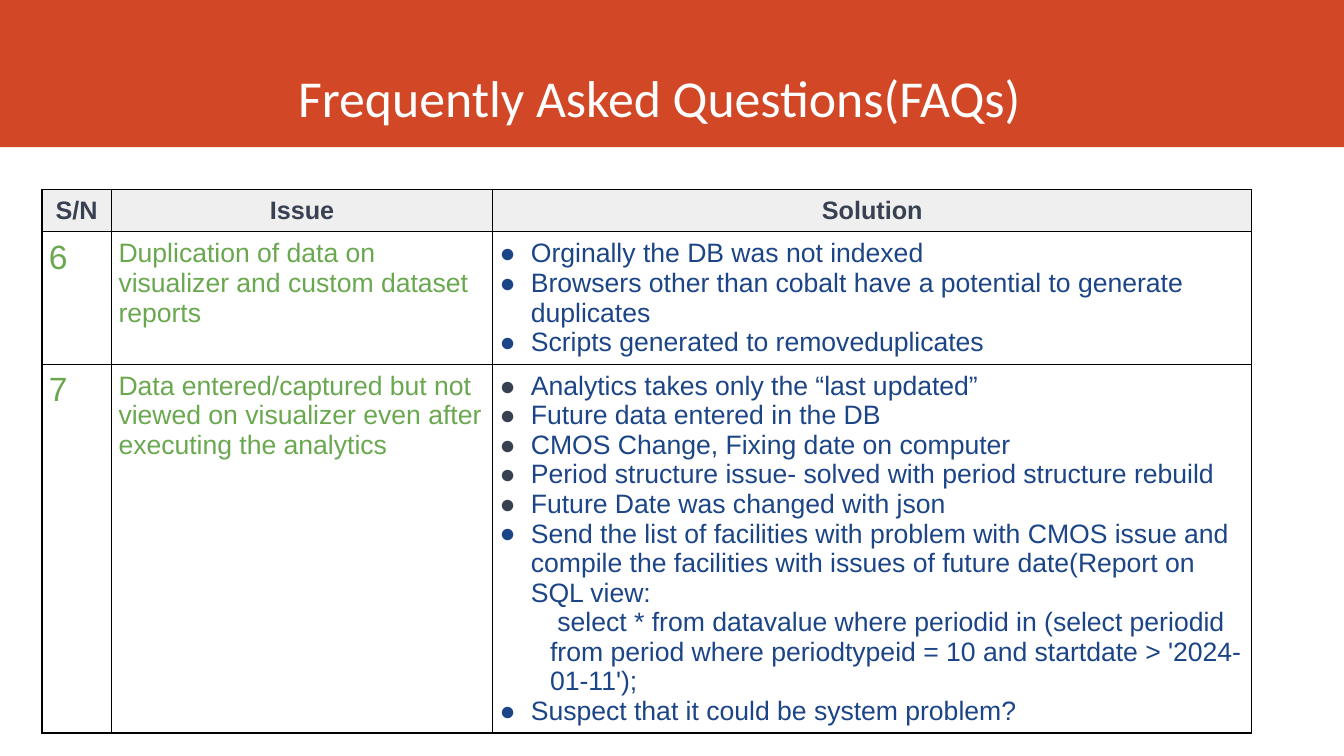
from dataclasses import dataclass

from lxml.etree import SubElement as Sub
from pptx import Presentation
from pptx.dml.color import RGBColor as RGB
from pptx.enum.shapes import MSO_SHAPE as Shape
from pptx.enum.text import MSO_ANCHOR as Anchor, MSO_AUTO_SIZE as Auto, PP_ALIGN as Align
from pptx.oxml.ns import qn
from pptx.util import Emu, Inches, Pt

COLORS = {
    "band": "D24726", "white": "FFFFFF", "head": "EFEFEF", "slate": "374151",
    "green": "6AA84F", "navy": "1C4587", "rule": "000000",
}
WIDE, HIGH = Inches(13.33), Inches(7.5)
PAD = Inches(0.07)

# Table grid, in percent of the slide's width and height
COLS = (5.18, 28.36, 56.49)
ROWS = (3.6, 9.87, 10.4)


@dataclass
class Line:
    text: str
    size: float = 19
    color: str = "navy"
    bold: bool = False
    align: Align = Align.LEFT
    dot: str = ""
    left: float = 0


@dataclass
class Case:
    num: str
    issue: str
    fixes: list[Line]


def item(text: str, dot: str = "navy") -> Line:
    return Line(text, dot=dot, left=0.31)


CASES = [
    Case("6", "Duplication of data on visualizer and custom dataset reports", [
        item("Orginally the DB was not indexed"),
        item("Browsers other than cobalt have a potential to generate duplicates"),
        item("Scripts generated to removeduplicates"),
    ]),
    Case("7", "Data entered/captured but not viewed on visualizer even after "
         "executing the analytics", [
        item("Analytics takes only the “last updated”", "slate"),
        item("Future data entered in the DB", "slate"),
        item("CMOS Change, Fixing date on computer", "slate"),
        item("Period structure issue- solved with period structure rebuild", "slate"),
        item("Future Date was changed with json", "slate"),
        item("Send the list of facilities with problem with CMOS issue and compile "
             "the facilities with issues of future date(Report on SQL view: "),
        Line(" select * from datavalue where periodid in (select periodid from period "
             "where periodtypeid = 10 and startdate > '2024-01-11');", left=0.5),
        item("Suspect that it could be system problem?"),
    ]),
]


def across(part: float) -> Emu:
    return Emu(round(WIDE * part / 100))


def down(part: float) -> Emu:
    return Emu(round(HIGH * part / 100))


def apply(obj, values: dict) -> None:
    for name, value in values.items():
        setattr(obj, name, value)


def tint(fill, color: str) -> None:
    fill.solid()
    fill.fore_color.rgb = RGB.from_string(COLORS[color])


def style(font, size: float, color: str, face: str, bold: bool = False) -> None:
    apply(font, {"name": face, "size": Pt(size), "bold": bold})
    font.color.rgb = RGB.from_string(COLORS[color])


def write(para, line: Line) -> None:
    para.alignment = line.align
    run = para.add_run()
    run.text = line.text
    style(run.font, line.size, line.color, "Arial", line.bold)
    props = para._p.get_or_add_pPr()
    if line.left:
        props.set("marL", str(Inches(line.left)))
        props.set("indent", str(Inches(-0.37) if line.dot else 0))
    if line.dot:
        shade = Sub(props, qn("a:buClr"))
        Sub(shade, qn("a:srgbClr"), val=COLORS[line.dot])
        Sub(props, qn("a:buFont"), typeface="Arial")
        Sub(props, qn("a:buChar"), char="●")


def frame(cell) -> None:
    props = cell._tc.get_or_add_tcPr()
    for spot, side in enumerate(("lnL", "lnR", "lnT", "lnB")):
        edge = props.makeelement(qn(f"a:{side}"), {"w": str(Pt(1))})
        fill = Sub(edge, qn("a:solidFill"))
        Sub(fill, qn("a:srgbClr"), val=COLORS["rule"])
        props.insert(spot, edge)


def fill_cell(cell, lines: list[Line], back: str = "") -> None:
    sides = ("left", "right", "top", "bottom")
    apply(cell, {f"margin_{side}": PAD for side in sides})
    if back:
        tint(cell.fill, back)
    else:
        cell.fill.background()
    frame(cell)
    text = cell.text_frame
    for pos, line in enumerate(lines):
        write(text.add_paragraph() if pos else text.paragraphs[0], line)


def add_title(slide) -> None:
    title = slide.shapes.title
    apply(title, {"left": across(4.95), "top": 0,
                  "width": across(88.22), "height": down(17.6)})
    text = title.text_frame
    apply(text, {"text": "Frequently Asked Questions(FAQs)", "word_wrap": True,
                 "auto_size": Auto.NONE, "vertical_anchor": Anchor.BOTTOM})
    para = text.paragraphs[0]
    apply(para, {"alignment": Align.CENTER, "line_spacing": 1.08, "space_after": Pt(8)})
    style(para.runs[0].font, 37, "white", "Calibri")

    # Colour band behind the title
    band = slide.shapes.add_shape(Shape.RECTANGLE, 0, 0, WIDE, down(19.47))
    band.shadow.inherit = False
    tint(band.fill, "band")
    band.line.fill.background()
    title.element.addprevious(band.element)


def add_cases(slide) -> None:
    table = slide.shapes.add_table(
        len(ROWS), len(COLS), across(3.12), down(25.07),
        across(sum(COLS)), down(sum(ROWS))).table
    apply(table, {"first_row": False, "horz_banding": False})
    for col, part in zip(table.columns, COLS):
        col.width = across(part)
    for row, part in zip(table.rows, ROWS):
        row.height = down(part)

    # Header row
    for col, name in enumerate(("S/N", "Issue", "Solution")):
        fill_cell(table.cell(0, col),
                  [Line(name, 18, "slate", True, Align.CENTER)], "head")

    # One row for each case
    for row, case in enumerate(CASES, 1):
        parts = ([Line(case.num, 24, "green")],
                 [Line(case.issue, color="green")], case.fixes)
        for col, lines in enumerate(parts):
            fill_cell(table.cell(row, col), lines)


def main() -> None:
    deck = Presentation()
    apply(deck, {"slide_width": WIDE, "slide_height": HIGH})
    slide = deck.slides.add_slide(deck.slide_layouts[5])
    add_title(slide)
    add_cases(slide)
    deck.save("out.pptx")


if __name__ == "__main__":
    main()
